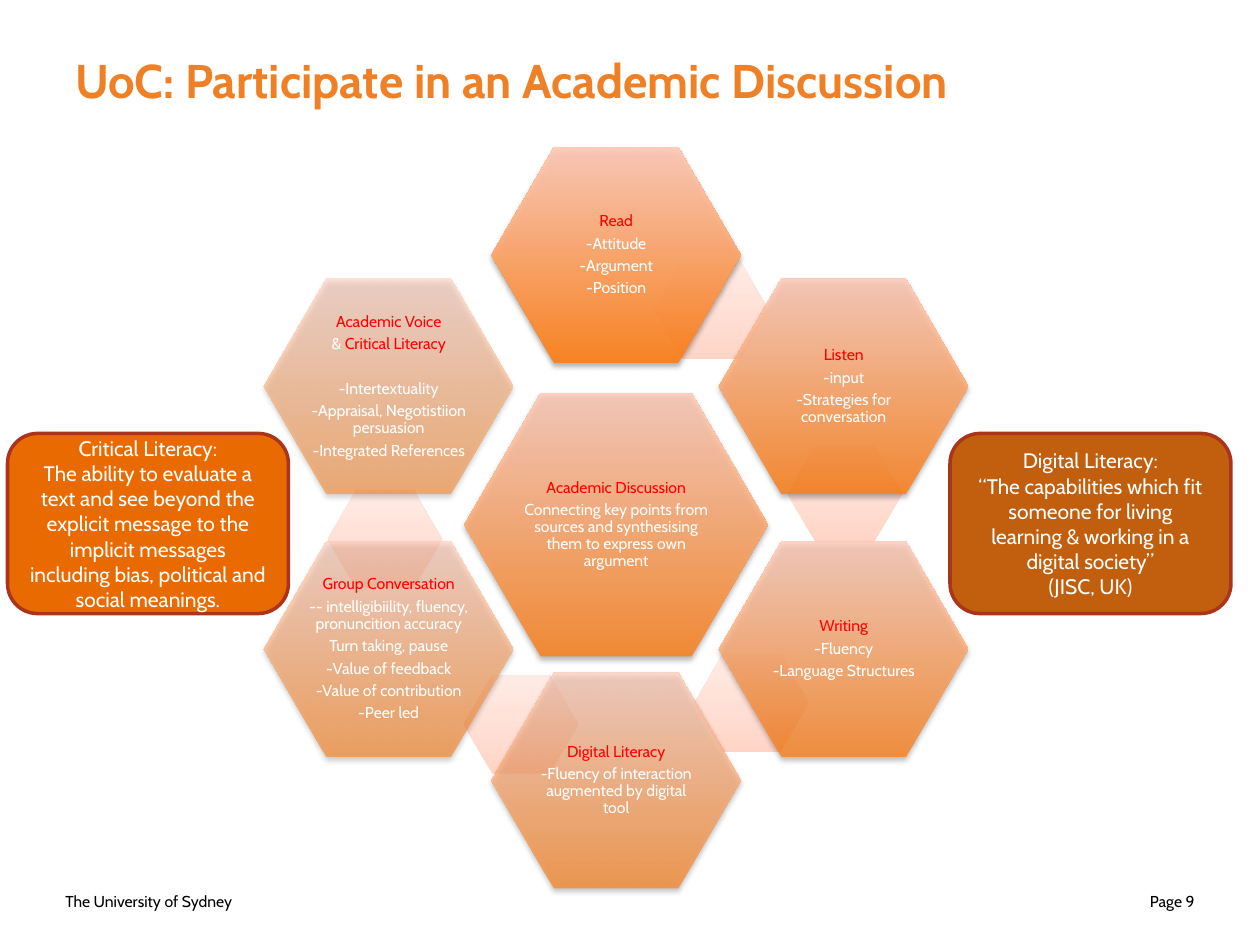
"""Build the slide on participating in an academic discussion."""
import math
from dataclasses import dataclass

import lxml.etree
import pptx
import pptx.dml.color
import pptx.enum.shapes
import pptx.enum.text
import pptx.oxml.ns
import pptx.util

Inches = pptx.util.Inches
Pt = pptx.util.Pt
Align = pptx.enum.text.PP_ALIGN
Shape = pptx.enum.shapes.MSO_SHAPE
Color = pptx.dml.color.RGBColor.from_string
qn = pptx.oxml.ns.qn


@dataclass(frozen=True)
class Theme:
    font: str = "Cabin"
    title: str = "EF8025"
    heading: str = "FF0000"
    light: str = "FFFFFF"
    dark: str = "000000"
    hexagon: tuple = ("FF7E15", "FFC9B6")
    link: tuple = ("FFD5C7", "FFEBE5")
    digital: str = "C15F0E"
    critical: str = "E96A00"
    border: str = "AA341C"
    title_size: int = 27
    callout_size: int = 12
    small_size: int = 9


theme = Theme()


def write(frame, lines, size, color, align, heading=None):
    """Fill a text frame with one paragraph per line, the first in the heading colour."""
    frame.word_wrap = True
    frame.vertical_anchor = pptx.enum.text.MSO_ANCHOR.MIDDLE
    for index, line in enumerate(lines):
        para = frame.paragraphs[0] if index == 0 else frame.add_paragraph()
        para.add_run().text = line
        para.alignment = align
        para.font.name = theme.font
        para.font.size = Pt(size)
        para.font.color.rgb = Color(heading if heading and index == 0 else color)


def add_hexagon(left, top, width, height, colors, opacity=100):
    """Add a hexagon with an upward gradient, shadowed when it is translucent."""
    box = page.shapes.add_shape(Shape.HEXAGON, Inches(left), Inches(top), Inches(width), Inches(height))
    box.adjustments[0] = 0.29
    box.line.fill.background()
    box.shadow.inherit = False
    box.fill.gradient()
    box.fill.gradient_angle = 90
    for stop, color in zip(box.fill.gradient_stops, colors):
        stop.color.rgb = Color(color)
    if opacity < 100:
        properties = box.element.spPr
        for node in list(properties.iter(qn("a:srgbClr"))):
            lxml.etree.SubElement(node, qn("a:alpha"), val=str(opacity * 1000))
        shadow = lxml.etree.SubElement(
            properties.find(qn("a:effectLst")), qn("a:outerShdw"),
            blurRad="40000", dist="23000", dir="5400000", rotWithShape="0")
        tint = lxml.etree.SubElement(shadow, qn("a:srgbClr"), val=theme.dark)
        lxml.etree.SubElement(tint, qn("a:alpha"), val="35000")


deck = pptx.Presentation()
deck.slide_width, deck.slide_height = Inches(10), Inches(7.5)
page = deck.slides.add_slide(deck.slide_layouts[5])

title = page.shapes.title
title.left, title.top, title.width, title.height = Inches(0.5), Inches(0.3), Inches(8.62), Inches(0.66)
write(title.text_frame, ["UoC: Participate in an Academic Discussion"], theme.title_size, theme.title, Align.LEFT)
title.text_frame.paragraphs[0].font.bold = True

for left, text, align in [(0.42, "The University of Sydney", Align.LEFT), (7.25, "Page 9", Align.RIGHT)]:
    box = page.shapes.add_textbox(Inches(left), Inches(6.95), Inches(2.33), Inches(0.4))
    write(box.text_frame, [text], theme.small_size, theme.dark, align)

center_x, center_y, radius = 4.89, 4.11, 2.085
hub = ["Academic Discussion",
       "Connecting key points from sources and synthesising them to express own argument"]
ring = [
    (90, (5.19, 2.07), ["Read", "-Attitude", "-Argument", "-Position"]),
    (82, (6.25, 3.53), ["Listen", "-input", "-Strategies for conversation"]),
    (74, (5.51, 5.19), ["Writing", "-Fluency", "-Language Structures"]),
    (66, (3.68, 5.36), ["Digital Literacy", "-Fluency of interaction augmented by digital tool"]),
    (58, (2.6, 3.89), ["Group Conversation", "-- intelligibiility, fluency, pronuncition accuracy",
                       "Turn taking, pause", "-Value of feedback", "-Value of contribution", "-Peer led"]),
    (50, None, ["Academic Voice", "&", "-Intertextuality", "-Appraisal, Negotistiion persuasion",
                "-Integrated References"]),
]
cells = [(center_x, 4.165, 2.41, 2.09, 1.61, 1.39, 80, None, hub)]
for index, (opacity, link, lines) in enumerate(ring):
    angle = math.radians(60 * index)
    x = center_x + radius * math.sin(angle)
    y = center_y - radius * math.cos(angle)
    cells.append((x, y, 1.98, 1.71, 1.32, 1.14, opacity, link, lines))

for x, y, width, height, text_width, text_height, opacity, link, lines in cells:
    if link:
        add_hexagon(*link, 0.91, 0.78, theme.link)
    add_hexagon(x - width / 2, y - height / 2, width, height, theme.hexagon, opacity)
    label = page.shapes.add_textbox(Inches(x - text_width / 2), Inches(y - text_height / 2),
                                    Inches(text_width), Inches(text_height))
    frame = label.text_frame
    frame.margin_left = frame.margin_right = frame.margin_top = frame.margin_bottom = Inches(0.01)
    write(frame, lines, theme.small_size, theme.light, Align.CENTER, theme.heading)
    for para in frame.paragraphs:
        para.line_spacing = 0.9
        para.space_after = Pt(3)

voice = frame.paragraphs
span = voice[1].add_run()
span.text = " Critical Literacy"
span.font.color.rgb = Color(theme.heading)
voice[2].space_before = Pt(13)

callouts = [
    (7.54, theme.digital, [
        "Digital Literacy:",
        "“The capabilities which fit someone for living learning & working in a digital society”",
        "(JISC, UK)"]),
    (0.06, theme.critical, [
        "Critical Literacy:",
        "The ability to evaluate a text and see beyond the explicit message to the implicit messages "
        "including bias, political and social meanings."]),
]
for left, color, lines in callouts:
    box = page.shapes.add_shape(Shape.ROUNDED_RECTANGLE, Inches(left), Inches(3.44), Inches(2.23), Inches(1.43))
    box.shadow.inherit = False
    box.fill.solid()
    box.fill.fore_color.rgb = Color(color)
    box.line.color.rgb = Color(theme.border)
    box.line.width = Pt(2)
    write(box.text_frame, lines, theme.callout_size, theme.light, Align.CENTER)

deck.save("out.pptx")
